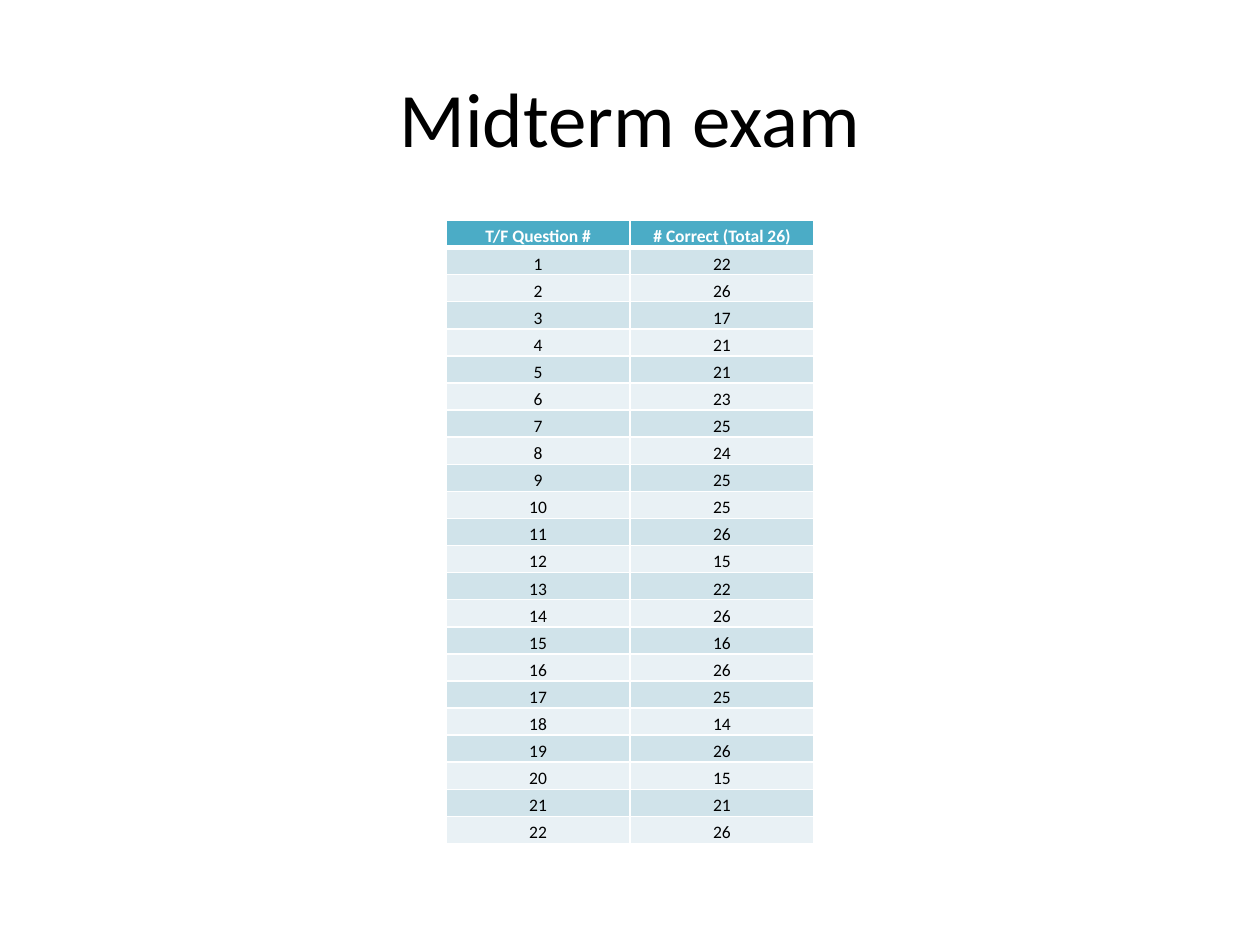
import pptx
import pptx.dml.color
import pptx.enum.text
import pptx.oxml.ns
import pptx.util
from lxml import etree
from pptx.util import Inches

BLACK = pptx.dml.color.RGBColor(0x00, 0x00, 0x00)
WHITE = pptx.dml.color.RGBColor(0xFF, 0xFF, 0xFF)
HEADER_TEAL = pptx.dml.color.RGBColor(0x4B, 0xAC, 0xC6)
BAND_DARK = pptx.dml.color.RGBColor(0xD0, 0xE3, 0xEA)
BAND_LIGHT = pptx.dml.color.RGBColor(0xE9, 0xF1, 0xF5)

HEADERS = ("T/F Question #", "# Correct (Total 26)")
CORRECT_COUNTS = (22, 26, 17, 21, 21, 23, 25, 24, 25, 25, 26,
                  15, 22, 26, 16, 26, 25, 14, 26, 15, 21, 26)

TABLE_WIDTH = 2.92
TABLE_HEIGHT = 4.95
THIN, THICK = 1, 3

TITLE_FONT = {"name": "Calibri", "size": pptx.util.Pt(44)}
CELL_FONT = {"name": "Calibri", "size": pptx.util.Pt(10)}
CELL_FORMAT = {
    "margin_left": Inches(0.01),
    "margin_right": Inches(0.01),
    "margin_top": Inches(0.01),
    "margin_bottom": 0,
    "vertical_anchor": pptx.enum.text.MSO_ANCHOR.BOTTOM,
}


def set_attributes(target, values):
    for name, value in values.items():
        setattr(target, name, value)


def write_centred(frame, text, font, color):
    para = frame.paragraphs[0]
    para.alignment = pptx.enum.text.PP_ALIGN.CENTER
    span = para.add_run()
    span.text = text
    set_attributes(span.font, font)
    span.font.color.rgb = color


def add_title(page, text):
    box = page.shapes.add_textbox(Inches(0.5), Inches(0.3), Inches(9), Inches(1.25))
    box.text_frame.word_wrap = True
    box.text_frame.vertical_anchor = pptx.enum.text.MSO_ANCHOR.MIDDLE
    write_centred(box.text_frame, text, TITLE_FONT, BLACK)


def add_borders(cell, top, bottom):
    """Draw white cell borders; must run before the cell's fill is set."""
    properties = cell._tc.get_or_add_tcPr()
    qn = pptx.oxml.ns.qn
    for side, points in (("L", THIN), ("R", THIN), ("T", top), ("B", bottom)):
        line = etree.SubElement(properties, qn(f"a:ln{side}"), w=str(pptx.util.Pt(points)))
        fill = etree.SubElement(line, qn("a:solidFill"))
        etree.SubElement(fill, qn("a:srgbClr"), val=str(WHITE))


def fill_cell(cell, text, row_index):
    is_header = row_index == 0
    add_borders(cell,
                top=THICK if row_index == 1 else THIN,
                bottom=THICK if is_header else THIN)
    band = BAND_DARK if row_index % 2 else BAND_LIGHT
    cell.fill.solid()
    cell.fill.fore_color.rgb = HEADER_TEAL if is_header else band
    set_attributes(cell, CELL_FORMAT)
    write_centred(cell.text_frame, text, {**CELL_FONT, "bold": is_header},
                  WHITE if is_header else BLACK)


def add_score_table(page):
    questions = [(str(number), str(count))
                 for number, count in enumerate(CORRECT_COUNTS, start=1)]
    rows = [HEADERS, *questions]
    table = page.shapes.add_table(
        len(rows), len(HEADERS), Inches(3.54), Inches(1.75),
        Inches(TABLE_WIDTH), Inches(TABLE_HEIGHT)).table
    for column in table.columns:
        column.width = Inches(TABLE_WIDTH / len(HEADERS))
    for row_index, texts in enumerate(rows):
        table.rows[row_index].height = Inches(TABLE_HEIGHT / len(rows))
        for column_index, text in enumerate(texts):
            fill_cell(table.cell(row_index, column_index), text, row_index)


def main():
    deck = pptx.Presentation()
    deck.slide_width = Inches(10)
    deck.slide_height = Inches(7.5)
    page = deck.slides.add_slide(deck.slide_layouts[6])
    add_title(page, "Midterm exam")
    add_score_table(page)
    deck.save("out.pptx")


if __name__ == "__main__":
    main()
